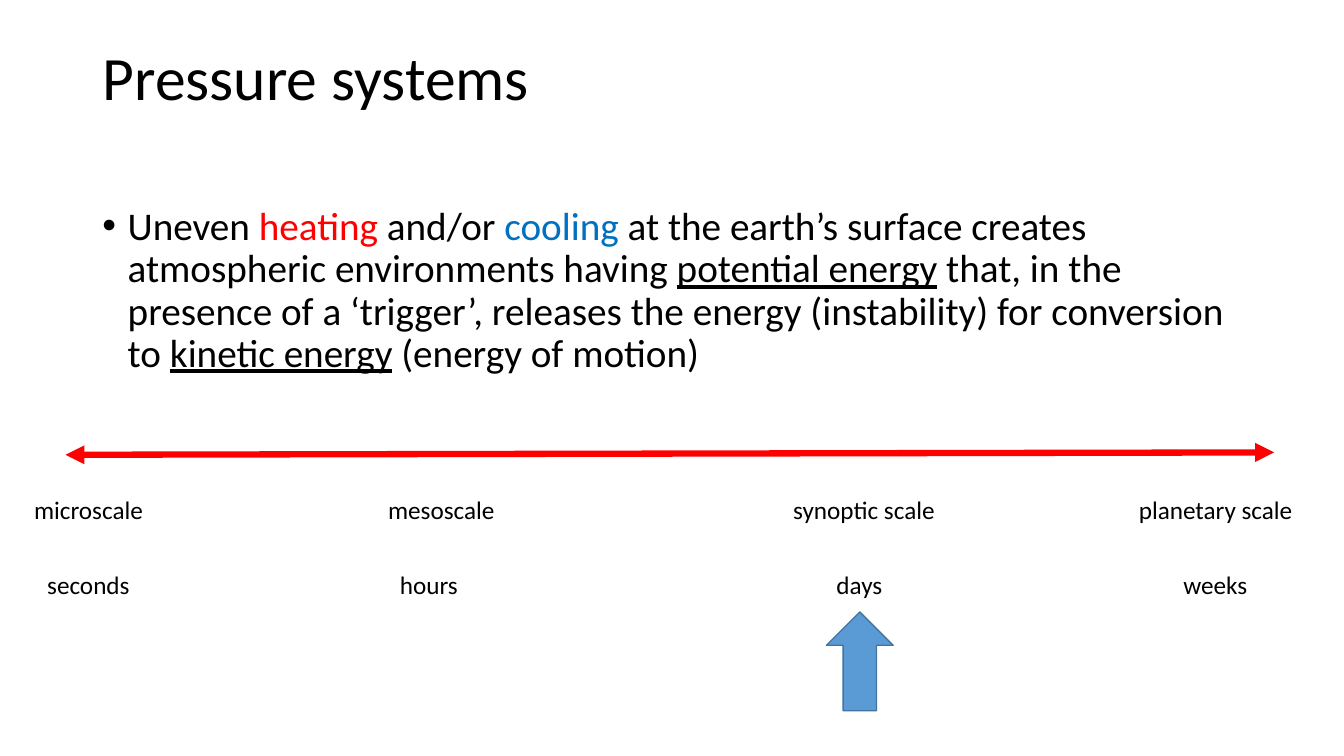
import lxml.etree
import pptx
import pptx.dml.color
import pptx.enum.shapes
import pptx.enum.text
import pptx.oxml.ns
import pptx.util

Cm = pptx.util.Cm
Pt = pptx.util.Pt
RGB = pptx.dml.color.RGBColor
Align = pptx.enum.text.PP_ALIGN
Anchor = pptx.enum.text.MSO_ANCHOR
Fit = pptx.enum.text.MSO_AUTO_SIZE

BLACK = RGB(0x00, 0x00, 0x00)
RED = RGB(0xFF, 0x00, 0x00)
BLUE = RGB(0x00, 0x70, 0xC0)
SKY = RGB(0x5B, 0x9B, 0xD5)
STEEL = RGB(0x43, 0x73, 0x9E)

LEFT, WIDTH = Cm(2.33), Cm(29.21)

CLAIM = [
    ("Uneven ", {}),
    ("heating", {"color": RED}),
    (" and/or ", {}),
    ("cooling", {"color": BLUE}),
    (" at the earth’s surface creates atmospheric environments having ", {}),
    ("potential energy", {"underline": True}),
    (" that, in the presence of a ‘trigger’, releases the energy "
     "(instability) for conversion to ", {}),
    ("kinetic energy", {"underline": True}),
    (" (energy of motion)", {}),
]

SCALES = [
    (12.32, [("microscale", 0.61, 3.28), ("mesoscale", 9.53, 3.23),
             ("synoptic scale", 19.74, 4.17),
             ("planetary scale", 28.45, 4.42)]),
    (14.22, [("seconds", 0.94, 2.62), ("hours", 9.83, 1.98),
             ("days", 20.83, 1.68), ("weeks", 29.57, 2.13)]),
]


def apply(item, values):
    for name, value in values.items():
        setattr(item, name, value)


def add_xml(parent, tag, **values):
    name = pptx.oxml.ns.qn(tag)
    return lxml.etree.SubElement(parent, name, **values)


def add_run(para, text, size, color=BLACK, **values):
    run = para.add_run()
    run.text = text
    apply(run.font, {"name": "Calibri", "size": Pt(size), **values})
    run.font.color.rgb = color


def set_title(slide, text):
    title = slide.shapes.title
    apply(title, {"left": LEFT, "top": Cm(1.02),
                  "width": WIDTH, "height": Cm(3.68)})
    frame = title.text_frame
    apply(frame, {"vertical_anchor": Anchor.TOP, "auto_size": Fit.NONE,
                  "margin_top": Cm(0.16)})
    para = frame.paragraphs[0]
    apply(para, {"alignment": Align.LEFT, "line_spacing": 0.9})
    add_run(para, text, 44)


def add_claim(slide, parts):
    box = slide.shapes.add_textbox(LEFT, Cm(5.08), WIDTH, Cm(12.09))
    box.text_frame.word_wrap = True
    para = box.text_frame.paragraphs[0]
    apply(para, {"line_spacing": 0.9, "space_before": Pt(10)})
    props = para._p.get_or_add_pPr()
    indent = Cm(0.64)
    props.set("marL", str(indent))
    props.set("indent", str(-indent))
    add_xml(props, "a:buFont", typeface="Arial")
    add_xml(props, "a:buChar", char="•")
    for text, values in parts:
        add_run(para, text, 28, **values)


def add_label(slide, text, left, top, width):
    box = slide.shapes.add_textbox(Cm(left), Cm(top), Cm(width), Cm(1.03))
    apply(box.text_frame, {"word_wrap": False,
                           "auto_size": Fit.SHAPE_TO_FIT_TEXT})
    add_run(box.text_frame.paragraphs[0], text, 18)


def add_axis(slide):
    kind = pptx.enum.shapes.MSO_CONNECTOR.STRAIGHT
    axis = slide.shapes.add_connector(
        kind, Cm(1.65), Cm(11.46), Cm(32.11), Cm(11.4))
    axis.line.color.rgb = RED
    axis.line.width = Pt(4.5)
    line = axis.line._get_or_add_ln()
    for end in ("a:headEnd", "a:tailEnd"):
        add_xml(line, end, type="triangle")
    add_xml(axis._element.spPr, "a:effectLst")


def add_arrow(slide):
    kind = pptx.enum.shapes.MSO_SHAPE.UP_ARROW
    arrow = slide.shapes.add_shape(
        kind, Cm(20.83), Cm(15.42), Cm(1.68), Cm(2.49))
    arrow.shadow.inherit = False
    arrow.fill.solid()
    arrow.fill.fore_color.rgb = SKY
    arrow.line.color.rgb = STEEL
    arrow.line.width = Pt(1)


def main():
    deck = pptx.Presentation()
    apply(deck, {"slide_width": Cm(33.87), "slide_height": Cm(19.05)})
    slide = deck.slides.add_slide(deck.slide_layouts[5])
    set_title(slide, "Pressure systems")
    add_claim(slide, CLAIM)
    add_axis(slide)
    for top, labels in SCALES:
        for text, left, width in labels:
            add_label(slide, text, left, top, width)
    add_arrow(slide)
    deck.save("out.pptx")


if __name__ == "__main__":
    main()
